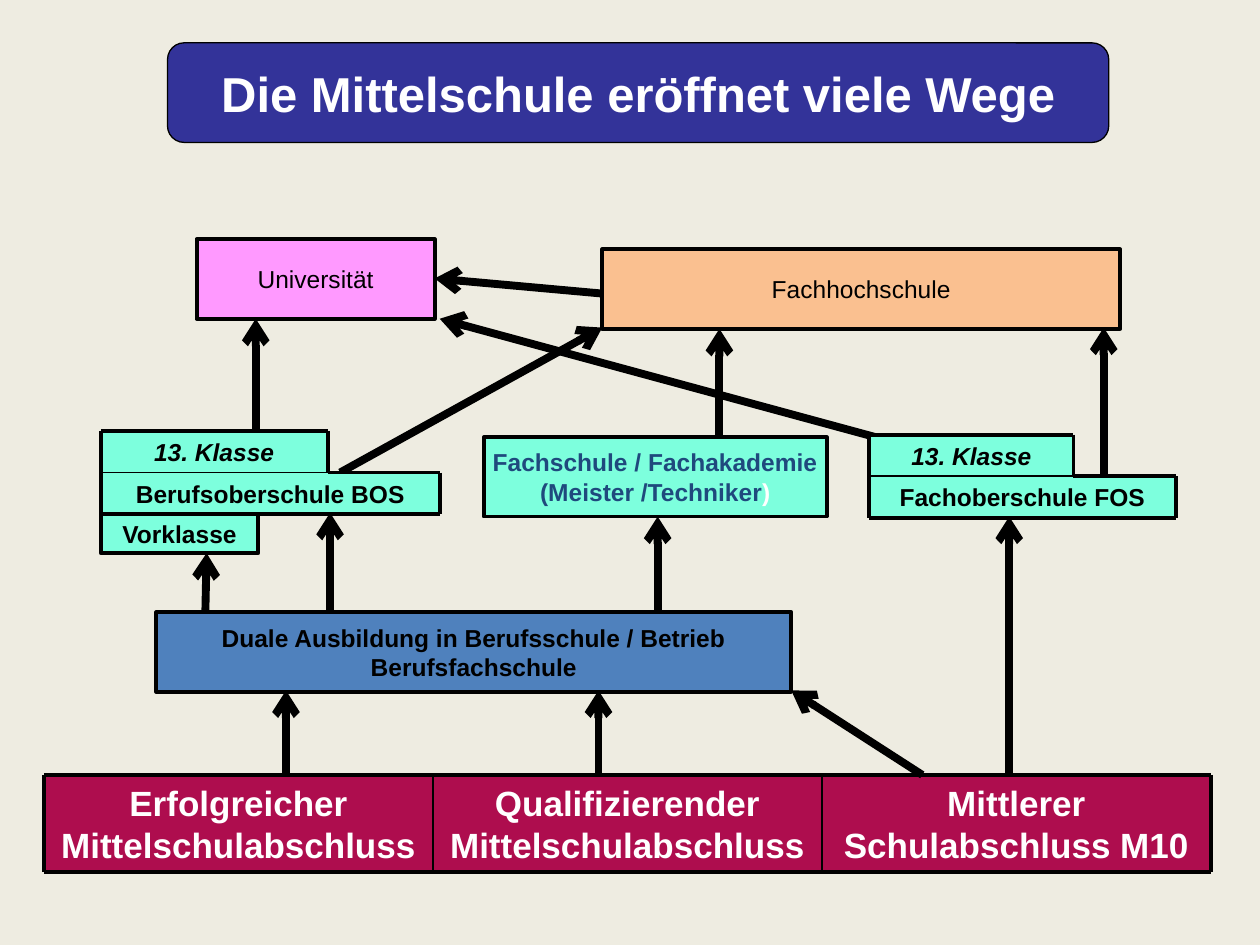
from dataclasses import dataclass

import pptx
import pptx.dml.color
import pptx.enum.shapes
import pptx.enum.text
import pptx.oxml
import pptx.oxml.ns
import pptx.util

RGB = pptx.dml.color.RGBColor
SHAPE = pptx.enum.shapes.MSO_SHAPE
ALIGN = pptx.enum.text.PP_ALIGN
ANCHOR = pptx.enum.text.MSO_ANCHOR

BACKGROUND = RGB(0xEE, 0xEC, 0xE1)
BLACK = RGB(0, 0, 0)
WHITE = RGB(0xFF, 0xFF, 0xFF)
NAVY = RGB(0x33, 0x33, 0x99)
DARK_BLUE = RGB(0x1F, 0x49, 0x7D)
BLUE = RGB(0x4F, 0x81, 0xBD)
MINT = RGB(0x7D, 0xFF, 0xDD)
ORANGE = RGB(0xFA, 0xC0, 0x90)
PINK = RGB(0xFF, 0x99, 0xFF)
CRIMSON = RGB(0xAE, 0x0D, 0x4E)

THICK, THIN, ARROW = 2.25, 1, 4.5
COLS, ROWS = 100, 75  # grid over the whole slide


@dataclass
class Box:
    text: str
    x: float
    y: float
    w: float
    h: float
    fill: RGB
    color: RGB = BLACK
    size: int = 14
    bold: bool = True
    italic: bool = False
    border: float = THICK
    wrap: bool = False
    shape: SHAPE = SHAPE.RECTANGLE


@dataclass
class School:
    name: str
    x: float
    y: float
    upper_w: float
    lower_w: float
    row_h: float = 3.3


prs = pptx.Presentation()
prs.slide_width = pptx.util.Inches(10)
prs.slide_height = pptx.util.Inches(7.5)
s = prs.slides.add_slide(prs.slide_layouts[5])
s.background.fill.solid()
s.background.fill.fore_color.rgb = BACKGROUND


def col(n: float) -> int:
    return round(prs.slide_width * n / COLS)


def row(n: float) -> int:
    return round(prs.slide_height * n / ROWS)


def add_text(p, text: str, *, size: int = 14, color: RGB = BLACK,
             bold: bool = True, italic: bool = False) -> None:
    p.alignment = ALIGN.CENTER
    r = p.add_run()
    r.text = text
    r.font.name = "Arial"
    r.font.size = pptx.util.Pt(size)
    r.font.bold = bold
    r.font.italic = italic
    r.font.color.rgb = color


def draw_box(b: Box):
    sp = s.shapes.add_shape(b.shape, col(b.x), row(b.y), col(b.w), row(b.h))
    sp.shadow.inherit = False
    sp.fill.solid()
    sp.fill.fore_color.rgb = b.fill
    if b.border:
        sp.line.color.rgb = BLACK
        sp.line.width = pptx.util.Pt(b.border)
    else:
        sp.line.fill.background()
    tf = sp.text_frame
    tf.word_wrap = b.wrap
    tf.vertical_anchor = ANCHOR.MIDDLE
    for i, text in enumerate(b.text.split("\n") if b.text else []):
        p = tf.add_paragraph() if i else tf.paragraphs[0]
        add_text(p, text, size=b.size, color=b.color, bold=b.bold, italic=b.italic)
    return sp


def draw_line(x1: float, y1: float, x2: float, y2: float,
              width: float = THICK, arrow: bool = False) -> None:
    c = s.shapes.add_connector(pptx.enum.shapes.MSO_CONNECTOR.STRAIGHT,
                               col(x1), row(y1), col(x2), row(y2))
    c.line.color.rgb = BLACK
    c.line.width = pptx.util.Pt(width)
    if arrow:
        ln = c.line._get_or_add_ln()
        ln.append(pptx.oxml.parse_xml(
            f'<a:tailEnd {pptx.oxml.ns.nsdecls("a")} type="arrow"/>'))
    c._element.spPr.append(pptx.oxml.parse_xml(
        f'<a:effectLst {pptx.oxml.ns.nsdecls("a")}/>'))


def draw_school(sc: School) -> None:
    """Two stacked rows outlined as a step, the upper row shorter."""
    left, step, right = sc.x, sc.x + sc.upper_w, sc.x + sc.lower_w
    top, mid, bottom = sc.y, sc.y + sc.row_h, sc.y + 2 * sc.row_h
    draw_box(Box(sc.name, left, mid, sc.lower_w, sc.row_h, MINT, border=0, wrap=True))
    draw_box(Box("13. Klasse", left, top, sc.upper_w, sc.row_h, MINT,
                 italic=True, border=0, wrap=True))
    draw_line(left, mid, step, mid, THIN)
    corners = [(left, top), (step, top), (step, mid), (right, mid),
               (right, bottom), (left, bottom), (left, top)]
    for start, end in zip(corners, corners[1:]):
        draw_line(*start, *end)


# Leaving certificates: one row of three cells
CERTIFICATES = ["Erfolgreicher Mittelschulabschluss",
                "Qualifizierender Mittelschulabschluss",
                "Mittlerer Schulabschluss M10"]
left, top, right, bottom = 3.5, 61.5, 96.1, 69.2
cell_w = (right - left) / len(CERTIFICATES)
for i, text in enumerate(CERTIFICATES):
    draw_box(Box(text, left + i * cell_w, top, cell_w, bottom - top, CRIMSON,
                 WHITE, size=20, border=0, wrap=True))
for y in (top, bottom):
    draw_line(left, y, right, y)
for i in range(len(CERTIFICATES) + 1):
    x = left + i * cell_w
    draw_line(x, top, x, bottom, THICK if i in (0, len(CERTIFICATES)) else THIN)

# Training and higher education
draw_box(Box("Duale Ausbildung in Berufsschule / Betrieb\nBerufsfachschule",
             12.4, 48.6, 50.4, 6.3, BLUE))
academy = draw_box(Box("Fachschule / Fachakademie\n(Meister /Techniker",
                       38.4, 34.7, 27.2, 6.3, MINT, DARK_BLUE))
add_text(academy.text_frame.paragraphs[-1], ")", color=WHITE)
draw_box(Box("Fachhochschule", 47.8, 19.8, 41.1, 6.3, ORANGE, bold=False))
draw_box(Box("Universität", 15.6, 19, 18.9, 6.3, PINK, bold=False))

# Paths that run behind the upper schools
for path in [(22.7, 61.6, 22.7, 54.8), (47.5, 61.5, 47.5, 54.8),
             (73.2, 61.5, 62.8, 54.8), (52.2, 48.4, 52.2, 41),
             (47.8, 23.3, 34.5, 22.1), (20.3, 34.3, 20.3, 25.3),
             (69.5, 34.7, 34.9, 25.3), (57.1, 34.8, 57.1, 26.1),
             (27, 37.5, 47.8, 26), (87.6, 37.8, 87.6, 26)]:
    draw_line(*path, ARROW, arrow=True)

# Upper schools
draw_school(School("Berufsoberschule BOS", 8, 34.2, 18, 26.9))
draw_school(School("Fachoberschule FOS", 69, 34.5, 16.2, 24.3))
draw_box(Box("Vorklasse", 8, 40.8, 12.5, 3.1, MINT))

# Paths into the upper schools
for path in [(80.1, 61.5, 80.1, 41), (26.2, 48.7, 26.2, 40.7),
             (16.3, 48.5, 16.4, 43.9)]:
    draw_line(*path, ARROW, arrow=True)

# Title on its rounded banner
banner = draw_box(Box("", 13.3, 3.4, 74.7, 7.9, NAVY, border=0.75,
                      shape=SHAPE.ROUNDED_RECTANGLE))
title = s.shapes.title
title.left, title.top = banner.left, banner.top
title.width, title.height = banner.width, banner.height
tf = title.text_frame
tf.auto_size = pptx.enum.text.MSO_AUTO_SIZE.NONE
tf.word_wrap = True
tf.vertical_anchor = ANCHOR.MIDDLE
add_text(tf.paragraphs[0], "Die Mittelschule eröffnet viele Wege", size=28, color=WHITE)
s.shapes._spTree.append(title._element)

prs.save("out.pptx")
